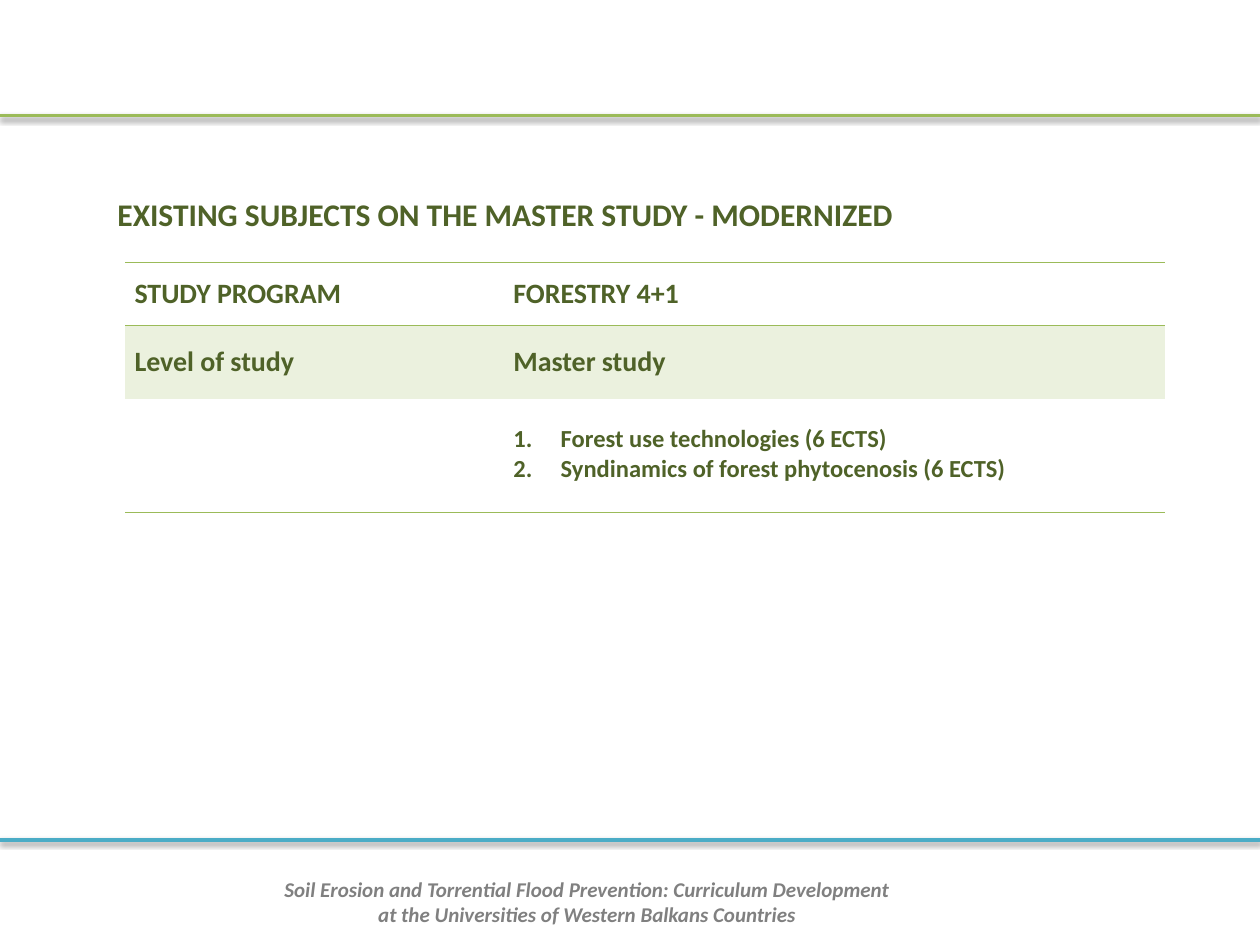
from pptx import Presentation
from pptx.dml.color import RGBColor
from pptx.enum.shapes import MSO_CONNECTOR
from pptx.enum.text import MSO_ANCHOR, PP_ALIGN
from pptx.oxml import parse_xml
from pptx.oxml.ns import nsdecls
from pptx.util import Pt

GREEN, TEAL, DARK, PALE, GRAY = "9BBB59", "4BACC6", "4F6228", "EBF1DE", "808080"


def rgb(value):
    return RGBColor.from_string(value)


def xml(tag, attrs="", body=""):
    return parse_xml(f"<a:{tag} {nsdecls('a')} {attrs}>{body}</a:{tag}>")


def write(tf, text, size=16, color=DARK, italic=False, align=PP_ALIGN.LEFT,
          numbered=False):
    """Put each line of text in its own paragraph."""
    for i, line in enumerate(text.split("\n")):
        p = tf.paragraphs[0] if i == 0 else tf.add_paragraph()
        p.alignment = align
        if numbered:
            pPr = p._p.get_or_add_pPr()
            pPr.set("marL", str(Pt(27)))
            pPr.set("indent", str(-Pt(27)))
            pPr.append(xml("buFont", 'typeface="+mj-lt"'))
            pPr.append(xml("buAutoNum", 'type="arabicPeriod"'))
        r = p.add_run()
        r.text = line
        r.font.name = "Calibri"
        r.font.size = Pt(size)
        r.font.bold = True
        r.font.italic = italic
        r.font.color.rgb = rgb(color)


class Deck:
    def __init__(self, width, height):
        self.prs = Presentation()
        self.prs.slide_width, self.prs.slide_height = Pt(width), Pt(height)
        self.width = width
        self.s = self.prs.slides.add_slide(self.prs.slide_layouts[6])

    def text(self, x, y, w, h, text, **fmt):
        sp = self.s.shapes.add_textbox(Pt(x), Pt(y), Pt(w), Pt(h))
        sp.text_frame.word_wrap = True
        write(sp.text_frame, text, **fmt)

    def rule(self, y, color):
        line = self.s.shapes.add_connector(
            MSO_CONNECTOR.STRAIGHT, 0, Pt(y), Pt(self.width), Pt(y))
        line.line.color.rgb = rgb(color)
        line.line.width = Pt(2)
        line._element.spPr.append(xml(
            "effectLst", "",
            f'<a:outerShdw blurRad="{Pt(3.1)}" dist="{Pt(1.6)}" dir="5400000" '
            'rotWithShape="0"><a:srgbClr val="000000"><a:alpha val="38000"/>'
            '</a:srgbClr></a:outerShdw>'))

    def borders(self, cell, top, bottom):
        tcPr = cell._tc.get_or_add_tcPr()
        for side, shown in zip("LRTB", (False, False, top, bottom)):
            paint = (f'<a:solidFill><a:srgbClr val="{GREEN}"/></a:solidFill>'
                     if shown else "<a:noFill/>")
            tcPr.append(xml(f"ln{side}", f'w="{Pt(1)}"', paint))

    def table(self, x, y, widths, heights, rows):
        tbl = self.s.shapes.add_table(
            len(heights), len(widths), Pt(x), Pt(y),
            Pt(sum(widths)), Pt(sum(heights))).table
        tbl.first_row = tbl.horz_banding = False
        for col, width in zip(tbl.columns, widths):
            col.width = Pt(width)
        last = len(rows) - 1
        for i, texts in enumerate(rows):
            tbl.rows[i].height = Pt(heights[i])
            for j, text in enumerate(texts):
                cell = tbl.cell(i, j)
                cell.margin_left = cell.margin_right = Pt(5.4)
                cell.margin_top = cell.margin_bottom = 0
                cell.vertical_anchor = MSO_ANCHOR.MIDDLE
                self.borders(cell, top=i < 2, bottom=i in (0, last))
                if i == 1:
                    cell.fill.solid()
                    cell.fill.fore_color.rgb = rgb(PALE)
                else:
                    cell.fill.background()
                if i == last:
                    cell.vertical_anchor = MSO_ANCHOR.TOP
                    cell.margin_top = Pt(14.6)
                if text:
                    write(cell.text_frame, text, size=14 if i == last else 16,
                          numbered=i == last)


def main():
    deck = Deck(720, 540)

    # Footer and rules
    deck.text(79, 497.5, 513, 36,
              "Soil Erosion and Torrential Flood Prevention: Curriculum Development\n"
              "at the Universities of Western Balkans Countries",
              size=12, color=GRAY, italic=True, align=PP_ALIGN.CENTER)
    deck.rule(66, GREEN)
    deck.rule(480, TEAL)

    # Study program table
    deck.table(71.5, 150, (216.5, 378), (36, 42, 65), (
        ("STUDY PROGRAM", "FORESTRY 4+1"),
        ("Level of study", "Master study"),
        ("", "Forest use technologies (6 ECTS)\n"
             "Syndinamics of forest phytocenosis (6 ECTS)"),
    ))

    # Heading
    deck.text(60, 108, 544, 29,
              "EXISTING SUBJECTS ON THE MASTER STUDY - MODERNIZED", size=18)

    deck.prs.save("out.pptx")


if __name__ == "__main__":
    main()
